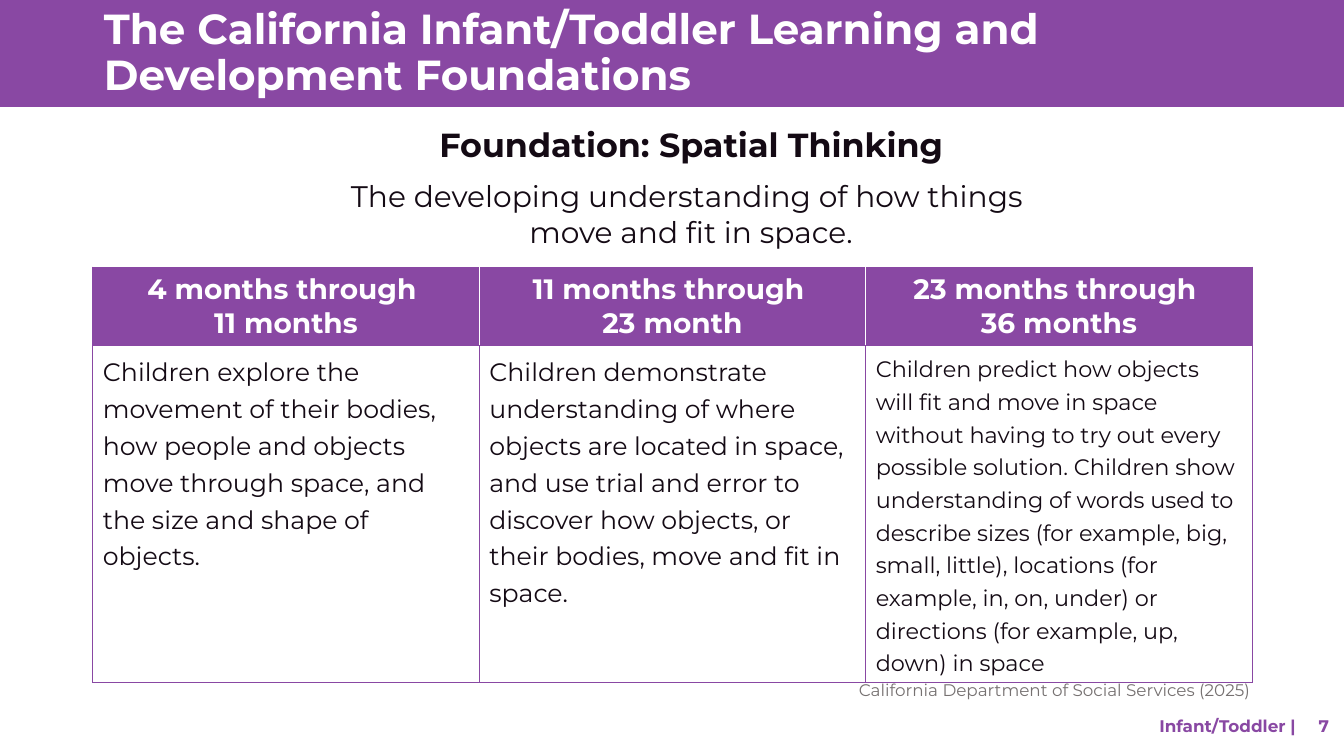
from copy import deepcopy
from dataclasses import dataclass

from lxml import etree
from pptx import Presentation
from pptx import util as u
from pptx.dml.color import RGBColor
from pptx.enum import shapes, text
from pptx.oxml.ns import qn

PURPLE = RGBColor(0x89, 0x48, 0xA3)
WHITE = RGBColor(0xFF, 0xFF, 0xFF)
INK = RGBColor(0x14, 0x0A, 0x14)
GREY = RGBColor(0x76, 0x71, 0x71)
FONT = "Montserrat"
LEFT, CENTER, RIGHT = text.PP_ALIGN.LEFT, text.PP_ALIGN.CENTER, text.PP_ALIGN.RIGHT


@dataclass
class Style:
    size: float
    color: RGBColor
    bold: bool = False
    align: text.PP_ALIGN = LEFT
    spacing: float = 1.0


@dataclass
class AgeBand:
    heading: str
    description: list[str]
    size: float = 18


HEADING = Style(20, WHITE, True, CENTER)
BANDS = [
    AgeBand("4 months through \v11 months", [
        "Children explore the movement of their bodies,",
        "how people and objects move through space, and",
        "the size and shape of objects."]),
    AgeBand("11 months through \v23 month", [
        "Children demonstrate understanding of where objects are located in space, "
        "and use trial and error to discover how objects, or their bodies, "
        "move and fit in space."]),
    AgeBand("23 months through \v36 months", [
        "Children predict how objects will fit and move in space without having to "
        "try out every possible solution. Children show understanding of words used "
        "to describe sizes (for example, big, small, little), locations (for example, "
        "in, on, under) or directions (for example, up, down) in space"], 16),
]


def format_paragraph(p, style: Style) -> None:
    p.alignment = style.align
    p.line_spacing = style.spacing
    for r in p.runs:
        r.font.name = FONT
        r.font.size = u.Pt(style.size)
        r.font.bold = style.bold
        r.font.color.rgb = style.color
    # Line breaks take the size of the text around them
    for br in p._p.findall(qn("a:br")):
        br.append(deepcopy(p.runs[0]._r.rPr))


def place(sp, left: float, top: float, width: float, height: float) -> None:
    sp.left, sp.top = u.Inches(left), u.Inches(top)
    sp.width, sp.height = u.Inches(width), u.Inches(height)


def add_text(s, box: tuple, content: str, style: Style):
    sp = s.shapes.add_textbox(*map(u.Inches, box))
    tf = sp.text_frame
    tf.word_wrap = True
    tf.text = content
    format_paragraph(tf.paragraphs[0], style)
    return sp


def set_borders(cell, colors: dict[str, RGBColor]) -> None:
    tcPr = cell._tc.get_or_add_tcPr()
    for i, side in enumerate("LRTB"):
        ln = etree.Element(qn(f"a:ln{side}"), w=str(u.Pt(1)))
        fill = etree.SubElement(ln, qn("a:solidFill"))
        etree.SubElement(fill, qn("a:srgbClr"), val=str(colors.get(side, PURPLE)))
        tcPr.insert(i, ln)


def fill_cell(cell, lines: list[str], fill: RGBColor, style: Style) -> None:
    cell.fill.solid()
    cell.fill.fore_color.rgb = fill
    tf = cell.text_frame
    tf.text = "\n".join(lines)
    for p in tf.paragraphs:
        format_paragraph(p, style)


def add_band_table(s, bands: list[AgeBand]) -> None:
    frame = s.shapes.add_table(2, len(bands), *map(u.Inches, (0.92, 2.65, 11.5, 4.12)))
    table = frame.table
    for row, height in zip(table.rows, (0.78, 3.34)):
        row.height = u.Inches(height)
    for i, band in enumerate(bands):
        head, body = table.cell(0, i), table.cell(1, i)
        fill_cell(head, [band.heading], PURPLE, HEADING)
        head.vertical_anchor = text.MSO_ANCHOR.MIDDLE
        inner = {"L": i > 0, "R": i < len(bands) - 1}
        set_borders(head, {side: WHITE for side, is_inner in inner.items() if is_inner})
        fill_cell(body, band.description, WHITE, Style(band.size, INK, spacing=1.2))
        set_borders(body, {})


def main() -> None:
    prs = Presentation()
    prs.slide_width, prs.slide_height = u.Inches(13.33), u.Inches(7.5)
    s = prs.slides.add_slide(prs.slide_layouts[1])
    title, body = s.placeholders[0], s.placeholders[1]

    # Title band, behind the title
    band = s.shapes.add_shape(shapes.MSO_SHAPE.RECTANGLE, 0, 0, prs.slide_width, u.Inches(1.06))
    band.shadow.inherit = False
    band.fill.solid()
    band.fill.fore_color.rgb = PURPLE
    band.line.fill.background()
    title._element.addprevious(band._element)

    # Title
    place(title, 0.93, 0.03, 11.85, 1.01)
    tf = title.text_frame
    tf.text = "The California Infant/Toddler Learning and Development Foundations"
    tf.auto_size = text.MSO_AUTO_SIZE.NONE
    tf.vertical_anchor = text.MSO_ANCHOR.MIDDLE
    format_paragraph(tf.paragraphs[0], Style(30, WHITE, True, spacing=0.9))

    # Foundation name and definition
    place(body, 0.93, 1.18, 11.85, 1.35)
    tf = body.text_frame
    tf.text = ("Foundation: Spatial Thinking\n"
               "The developing understanding of how things \vmove and fit in space.")
    tf.auto_size = text.MSO_AUTO_SIZE.NONE
    styles = (Style(23.8, INK, True, CENTER), Style(21.2, INK, False, CENTER))
    for p, style, before in zip(tf.paragraphs, styles, (0, 10)):
        pPr = p._p.get_or_add_pPr()
        pPr.set("marL", "0")
        pPr.set("indent", "0")
        etree.SubElement(pPr, qn("a:buNone"))
        p.space_before = u.Pt(before)
        format_paragraph(p, style)

    # Age bands
    add_band_table(s, BANDS)

    # Source and footer, with a tab stop before the page number
    add_text(s, (0.83, 6.69, 11.67, 0.3), "California Department of Social Services (2025)",
             Style(12, GREY, align=RIGHT))
    footer = add_text(s, (11.4, 7, 1.9, 0.4), "Infant/Toddler |\t7", Style(12, PURPLE, True))
    footer.text_frame.vertical_anchor = text.MSO_ANCHOR.MIDDLE
    pPr = footer.text_frame.paragraphs[0]._p.get_or_add_pPr()
    tabs = etree.SubElement(pPr, qn("a:tabLst"))
    etree.SubElement(tabs, qn("a:tab"), pos=str(u.Inches(1.58)), algn="l")

    prs.save("out.pptx")


if __name__ == "__main__":
    main()
